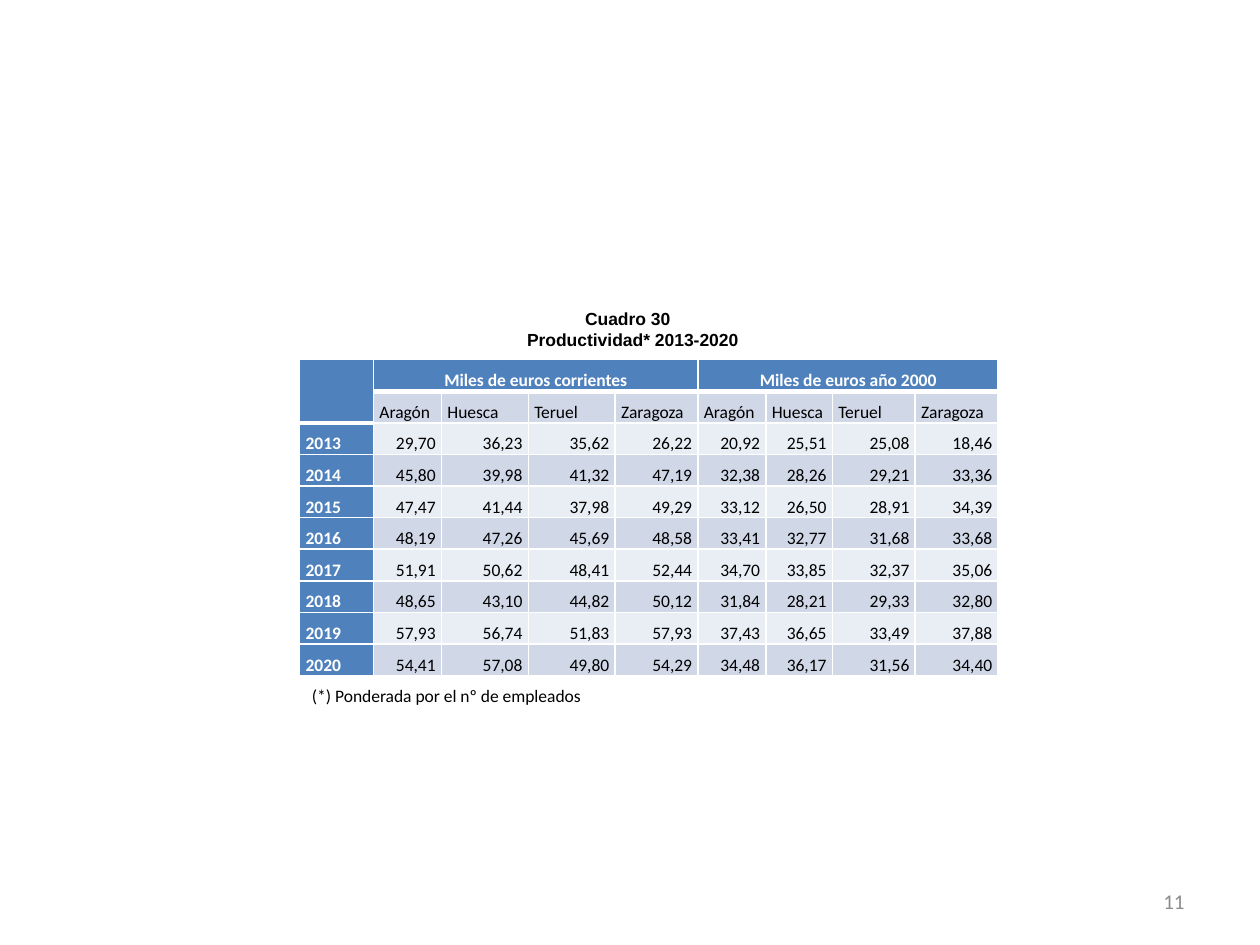
from dataclasses import dataclass

from lxml.etree import SubElement
from pptx import Presentation
from pptx.dml.color import RGBColor
from pptx.enum.text import MSO_ANCHOR, MSO_AUTO_SIZE, PP_ALIGN
from pptx.oxml.ns import qn
from pptx.util import Cm, Pt


@dataclass(frozen=True)
class Theme:
    """Colours, fonts and type sizes of the slide."""
    blue: str = "4F81BD"
    dark: str = "D0D8E8"
    light: str = "E9EDF4"
    white: str = "FFFFFF"
    black: str = "000000"
    grey: str = "8C8C8C"
    body: str = "Calibri"
    head: str = "Arial"
    size: int = 10
    page: int = 12


@dataclass(frozen=True)
class Box:
    """Place of an object, in centimetres."""
    left: float
    top: float
    width: float
    height: float

    def lengths(self) -> tuple:
        """Give the four sides as lengths."""
        return Cm(self.left), Cm(self.top), Cm(self.width), Cm(self.height)


@dataclass(frozen=True)
class Look:
    """Type and alignment of a paragraph."""
    align: PP_ALIGN
    color: str = Theme.black
    bold: bool = False
    size: int = Theme.size
    face: str = Theme.body


@dataclass(frozen=True)
class Year:
    """Productivity figures of one year."""
    name: str
    values: str


HEAD = Look(PP_ALIGN.CENTER, Theme.white, True)
SIDE = Look(PP_ALIGN.JUSTIFY, Theme.white, True)
PLACE = Look(PP_ALIGN.JUSTIFY)
VALUE = Look(PP_ALIGN.RIGHT)
TITLE = Look(PP_ALIGN.LEFT, bold=True, face=Theme.head)
PAGE = Look(PP_ALIGN.RIGHT, Theme.grey, size=Theme.page)

GROUPS = ["Miles de euros corrientes", "Miles de euros año 2000"]
PLACES = ["Aragón", "Huesca", "Teruel", "Zaragoza"]
WIDTHS = [1.49, 1.37, 1.75, 1.75, 1.67, 1.37, 1.34, 1.67, 1.67]
ROW = 0.63
YEARS = [
    Year("2013", "29,70 36,23 35,62 26,22 20,92 25,51 25,08 18,46"),
    Year("2014", "45,80 39,98 41,32 47,19 32,38 28,26 29,21 33,36"),
    Year("2015", "47,47 41,44 37,98 49,29 33,12 26,50 28,91 34,39"),
    Year("2016", "48,19 47,26 45,69 48,58 33,41 32,77 31,68 33,68"),
    Year("2017", "51,91 50,62 48,41 52,44 34,70 33,85 32,37 35,06"),
    Year("2018", "48,65 43,10 44,82 50,12 31,84 28,21 29,33 32,80"),
    Year("2019", "57,93 56,74 51,83 57,93 37,43 36,65 33,49 37,88"),
    Year("2020", "54,41 57,08 49,80 54,29 34,48 36,17 31,56 34,40"),
]


def style(para, look: Look) -> None:
    """Apply a look to a paragraph."""
    para.alignment = look.align
    font = para.font
    font.name, font.size, font.bold = look.face, Pt(look.size), look.bold
    font.color.rgb = RGBColor.from_string(look.color)


def edge(cell, base: int) -> None:
    """Draw white cell borders, with the given width at the base."""
    props = cell._tc.get_or_add_tcPr()
    for spot, side in enumerate("LRTB"):
        width = Pt(base if side == "B" else 1)
        line = SubElement(props, qn(f"a:ln{side}"), w=str(width))
        fill = SubElement(line, qn("a:solidFill"))
        SubElement(fill, qn("a:srgbClr"), val=Theme.white)
        props.insert(spot, line)


def paint(cell, text: str, look: Look, fill: str, base: int = 1) -> None:
    """Fill one cell and set its text and borders."""
    cell.fill.solid()
    cell.fill.fore_color.rgb = RGBColor.from_string(fill)
    cell.margin_left = cell.margin_right = Cm(0.12)
    cell.margin_top = cell.margin_bottom = 0
    cell.vertical_anchor = MSO_ANCHOR.BOTTOM
    cell.text = text
    para = cell.text_frame.paragraphs[0]
    para.line_spacing = 1.5
    style(para, look)
    edge(cell, base)


def add_grid(slide, box: Box) -> None:
    """Add the table of productivity by year and place."""
    rows = len(YEARS) + 2
    table = slide.shapes.add_table(rows, len(WIDTHS), *box.lengths()).table
    for col, width in zip(table.columns, WIDTHS):
        col.width = Cm(width)
    for row in table.rows:
        row.height = Cm(ROW)

    span = len(PLACES)
    heads = [""]
    for group in GROUPS:
        heads += [group] + [""] * (span - 1)
    for col, text in enumerate(heads):
        paint(table.cell(0, col), text, HEAD, Theme.blue, 3)
    paint(table.cell(1, 0), "", HEAD, Theme.blue, 3)
    for col, text in enumerate(PLACES * len(GROUPS), 1):
        paint(table.cell(1, col), text, PLACE, Theme.dark)
    for row, year in enumerate(YEARS, 2):
        paint(table.cell(row, 0), year.name, SIDE, Theme.blue)
        fill = Theme.dark if row % 2 else Theme.light
        for col, text in enumerate(year.values.split(), 1):
            paint(table.cell(row, col), text, VALUE, fill)

    table.cell(0, 0).merge(table.cell(1, 0))
    for left in range(1, len(WIDTHS), span):
        table.cell(0, left).merge(table.cell(0, left + span - 1))


def add_title(slide, box: Box) -> None:
    """Set the two-line title, with its first line indented."""
    title = slide.shapes.title
    title.left, title.top, title.width, title.height = box.lengths()
    frame = title.text_frame
    frame.text = "Cuadro 30\nProductividad* 2013-2020"
    frame.word_wrap = True
    frame.auto_size = MSO_AUTO_SIZE.SHAPE_TO_FIT_TEXT
    frame.vertical_anchor = MSO_ANCHOR.MIDDLE
    for para in frame.paragraphs:
        style(para, TITLE)
    frame.paragraphs[0]._p.get_or_add_pPr().set("indent", str(Cm(1.17)))


def add_note(slide, box: Box, text: str, look: Look):
    """Add a one-paragraph text box and return its frame."""
    frame = slide.shapes.add_textbox(*box.lengths()).text_frame
    frame.text = text
    style(frame.paragraphs[0], look)
    return frame


def main() -> None:
    """Build and save the slide."""
    deck = Presentation()
    deck.slide_width, deck.slide_height = Cm(25.4), Cm(19.05)
    slide = deck.slides.add_slide(deck.slide_layouts[5])
    page = add_note(slide, Box(18.2, 17.66, 5.93, 1.01), "11", PAGE)
    page.word_wrap = True
    page.vertical_anchor = MSO_ANCHOR.MIDDLE
    add_grid(slide, Box(6.04, 7.25, sum(WIDTHS), ROW * (len(YEARS) + 2)))
    add_title(slide, Box(10.37, 6.07, 5.13, 1.11))
    note = add_note(slide, Box(6.04, 13.48, 6.03, 0.85),
                    "(*) Ponderada por el nº de empleados", PLACE)
    note.auto_size = MSO_AUTO_SIZE.SHAPE_TO_FIT_TEXT
    note.paragraphs[0].line_spacing = 1.5
    note.paragraphs[0].space_after = Pt(6)
    deck.save("out.pptx")


if __name__ == "__main__":
    main()
